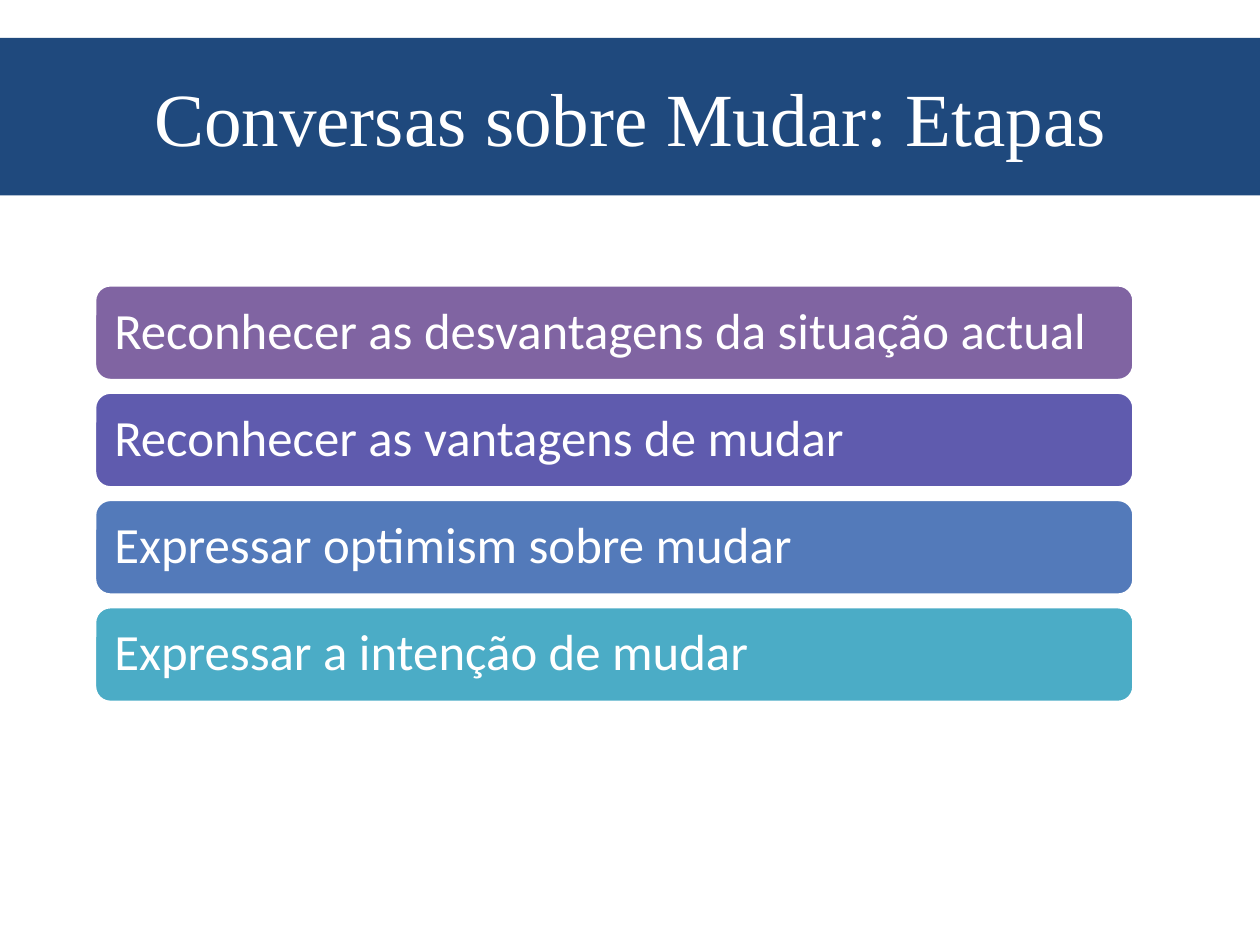
"""Build a slide with a title band and four stacked steps of change talk."""
import pptx
import pptx.dml.color
import pptx.enum.shapes
import pptx.enum.text
import pptx.util

Pt = pptx.util.Pt
ALIGN = pptx.enum.text.PP_ALIGN
STEPS = [
    ("Reconhecer as desvantagens da situação actual", "8064A2"),
    ("Reconhecer as vantagens de mudar", "5F5BAE"),
    ("Expressar optimism sobre mudar", "537ABA"),
    ("Expressar a intenção de mudar", "4BACC6"),
]


def rgb(value):
    return pptx.dml.color.RGBColor.from_string(value)


def write(tf, text, font, size, color="FFFFFF", align=ALIGN.LEFT, spacing=1.0):
    tf.word_wrap = True
    tf.auto_size = pptx.enum.text.MSO_AUTO_SIZE.NONE
    tf.vertical_anchor = pptx.enum.text.MSO_ANCHOR.MIDDLE
    p = tf.paragraphs[0]
    p.alignment = align
    p.line_spacing = spacing
    r = p.add_run()
    r.text = text
    r.font.name = font
    r.font.size = Pt(size)
    r.font.color.rgb = rgb(color)


class Deck:
    title_font = "Times New Roman"
    body_font = "Calibri"
    band = "1F497D"
    outline = "FFFFFF"
    inset = 8.64

    def __init__(self, prs):
        self.s = prs.slides.add_slide(prs.slide_layouts[5])

    def title(self, text, left, top, width, height):
        sp = self.s.shapes.title
        sp.left, sp.top, sp.width, sp.height = map(Pt, (left, top, width, height))
        sp.fill.solid()
        sp.fill.fore_color.rgb = rgb(self.band)
        write(sp.text_frame, text, self.title_font, 42.9, align=ALIGN.CENTER)

    def bar(self, text, fill, left, top, width, height):
        sp = self.s.shapes.add_shape(
            pptx.enum.shapes.MSO_SHAPE.ROUNDED_RECTANGLE,
            *map(Pt, (left, top, width, height)))
        sp.shadow.inherit = False
        sp.fill.solid()
        sp.fill.fore_color.rgb = rgb(fill)
        sp.line.color.rgb = rgb(self.outline)
        sp.line.width = Pt(2)
        tf = sp.text_frame
        tf.margin_left = tf.margin_right = Pt(self.inset)
        tf.margin_top = tf.margin_bottom = Pt(self.inset)
        write(tf, text, self.body_font, 29, spacing=0.9)


def main():
    prs = pptx.Presentation()
    prs.slide_width, prs.slide_height = Pt(720), Pt(540)
    deck = Deck(prs)
    deck.title("Conversas sobre Mudar: Etapas", 0, 21.6, 720, 90)
    for i, (text, fill) in enumerate(STEPS):
        deck.bar(text, fill, 54, 162.8 + i * 61.3, 594, 54.7)
    prs.save("out.pptx")


if __name__ == "__main__":
    main()
